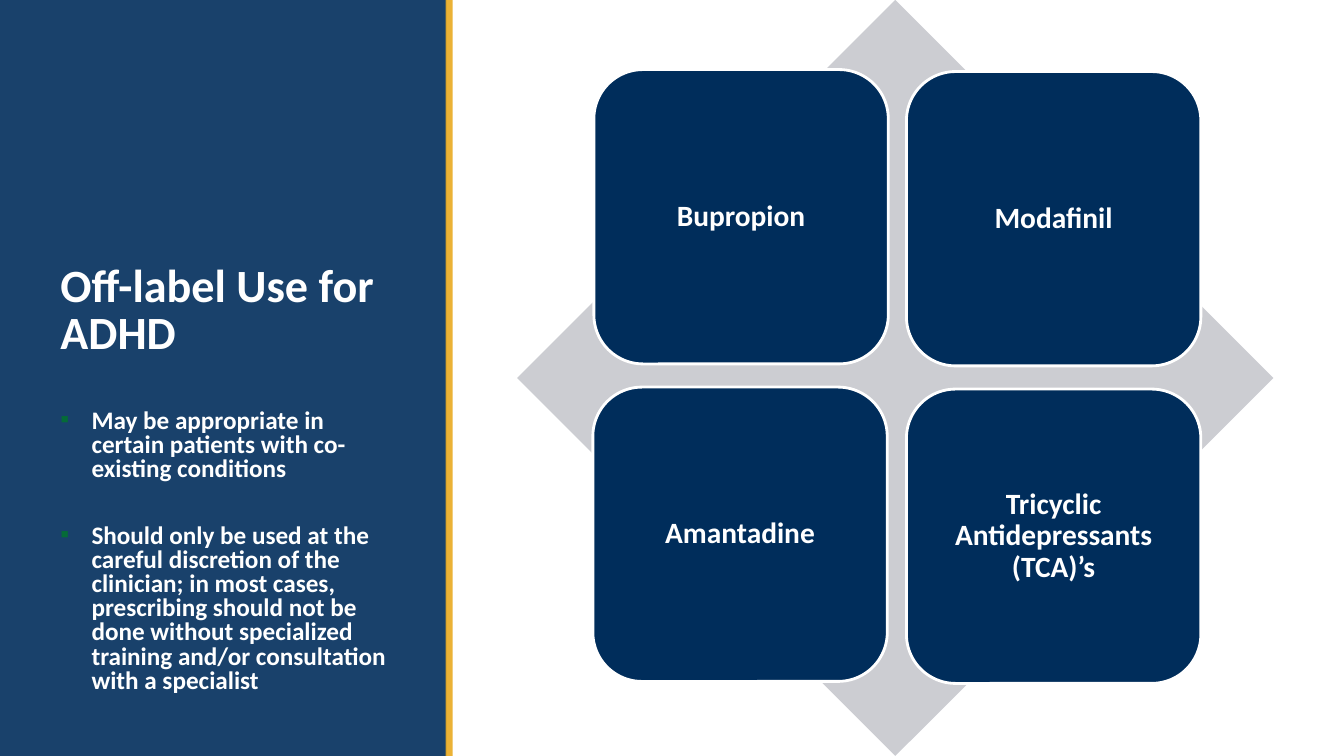
from lxml import etree
from pptx import Presentation
from pptx import util as u
from pptx.dml.color import RGBColor
from pptx.enum import shapes, text
from pptx.oxml import ns

HUES = {"navy": "002D5B", "gold": "E9AA21", "gray": "CCCDD2",
        "white": "FFFFFF", "green": "056B38"}
FONT = {"name": "Calibri", "bold": True}
POINTS = [
    "May be appropriate in certain patients with co-existing conditions",
    "Should only be used at the careful discretion of the clinician; "
    "in most cases, prescribing should not be done without specialized "
    "training and/or consultation with a specialist",
]
DRUGS = [
    ("Amantadine", 0.75, 3.84),
    ("Modafinil", 3.86, 0.71),
    ("Bupropion", 0.76, 0.69),
    ("Tricyclic Antidepressants (TCA)’s", 3.86, 3.86),
]


def assign(item, values):
    for key, value in values.items():
        setattr(item, key, value)


def hue(name):
    return RGBColor.from_string(HUES[name])


def style(font, size):
    assign(font, {**FONT, "size": u.Pt(size)})
    font.color.rgb = hue("white")


def place(item, left, top, width, height):
    assign(item, {"left": u.Inches(left), "top": u.Inches(top),
                  "width": u.Inches(width), "height": u.Inches(height)})


def block(slide, kind, box, color, alpha=None):
    shape = slide.shapes.add_shape(kind, *map(u.Inches, box))
    shape.shadow.inherit = False
    shape.fill.solid()
    shape.fill.fore_color.rgb = hue(color)
    shape.line.fill.background()
    if alpha:
        tint = shape.fill._xPr.find(".//" + ns.qn("a:srgbClr"))
        etree.SubElement(tint, ns.qn("a:alpha"), val=str(alpha * 1000))
    return shape


def bullet(para):
    props = para._p.get_or_add_pPr()
    indent = u.Inches(0.31)
    props.set("marL", str(indent))
    props.set("indent", str(-indent))
    color = etree.SubElement(props, ns.qn("a:buClr"))
    etree.SubElement(color, ns.qn("a:srgbClr"), val=HUES["green"])
    etree.SubElement(props, ns.qn("a:buFont"), typeface="Arial")
    etree.SubElement(props, ns.qn("a:buChar"), char="▪")


def panel(slide, left, top, width, height):
    rect = shapes.MSO_SHAPE.RECTANGLE
    block(slide, rect, (left, top, width, height), "navy", 90)
    block(slide, rect, (left + width - 0.01, top, 0.07, height), "gold", 90)

    title = slide.shapes.title
    slide.shapes._spTree.append(title._element)
    place(title, left + 0.5, top + 1.11, 3.5, 2.5)
    frame = title.text_frame
    frame.text = "Off-label Use for ADHD"
    assign(frame, {"word_wrap": True, "auto_size": text.MSO_AUTO_SIZE.NONE,
                   "vertical_anchor": text.MSO_ANCHOR.BOTTOM})
    para = frame.paragraphs[0]
    assign(para, {"alignment": text.PP_ALIGN.LEFT, "line_spacing": 0.85})
    style(para.runs[0].font, 33)

    notes = slide.shapes.add_textbox(0, 0, 0, 0)
    place(notes, left + 0.5, top + 4.02, 3.5, 3.33)
    frame = notes.text_frame
    frame.word_wrap = True
    for index, point in enumerate(POINTS):
        para = frame.add_paragraph() if index else frame.paragraphs[0]
        bullet(para)
        para.line_spacing = 0.8
        if index:
            para.space_before = u.Pt(30)
        run = para.add_run()
        run.text = point
        style(run.font, 18)


def matrix(slide, left, top, size):
    block(slide, shapes.MSO_SHAPE.DIAMOND, (left, top, size, size), "gray")
    side = 2.92
    for name, across, down in DRUGS:
        tile = block(slide, shapes.MSO_SHAPE.ROUNDED_RECTANGLE,
                     (left + across, top + down, side, side), "navy")
        tile.line.color.rgb = hue("white")
        tile.line.width = u.Pt(2)
        frame = tile.text_frame
        frame.text = name
        pad = u.Inches(0.09)
        assign(frame, {"word_wrap": True,
                       "vertical_anchor": text.MSO_ANCHOR.MIDDLE,
                       "margin_left": pad, "margin_right": pad,
                       "margin_top": pad, "margin_bottom": pad})
        para = frame.paragraphs[0]
        assign(para, {"alignment": text.PP_ALIGN.CENTER, "line_spacing": 0.9})
        style(para.runs[0].font, 21)


def main():
    deck = Presentation()
    assign(deck, {"slide_width": u.Inches(13.33),
                  "slide_height": u.Inches(7.5)})
    slide = deck.slides.add_slide(deck.slide_layouts.get_by_name("Title Only"))
    panel(slide, 0, 0, 4.43, 7.5)
    matrix(slide, 5.13, 0, 7.5)
    deck.save("out.pptx")


if __name__ == "__main__":
    main()
